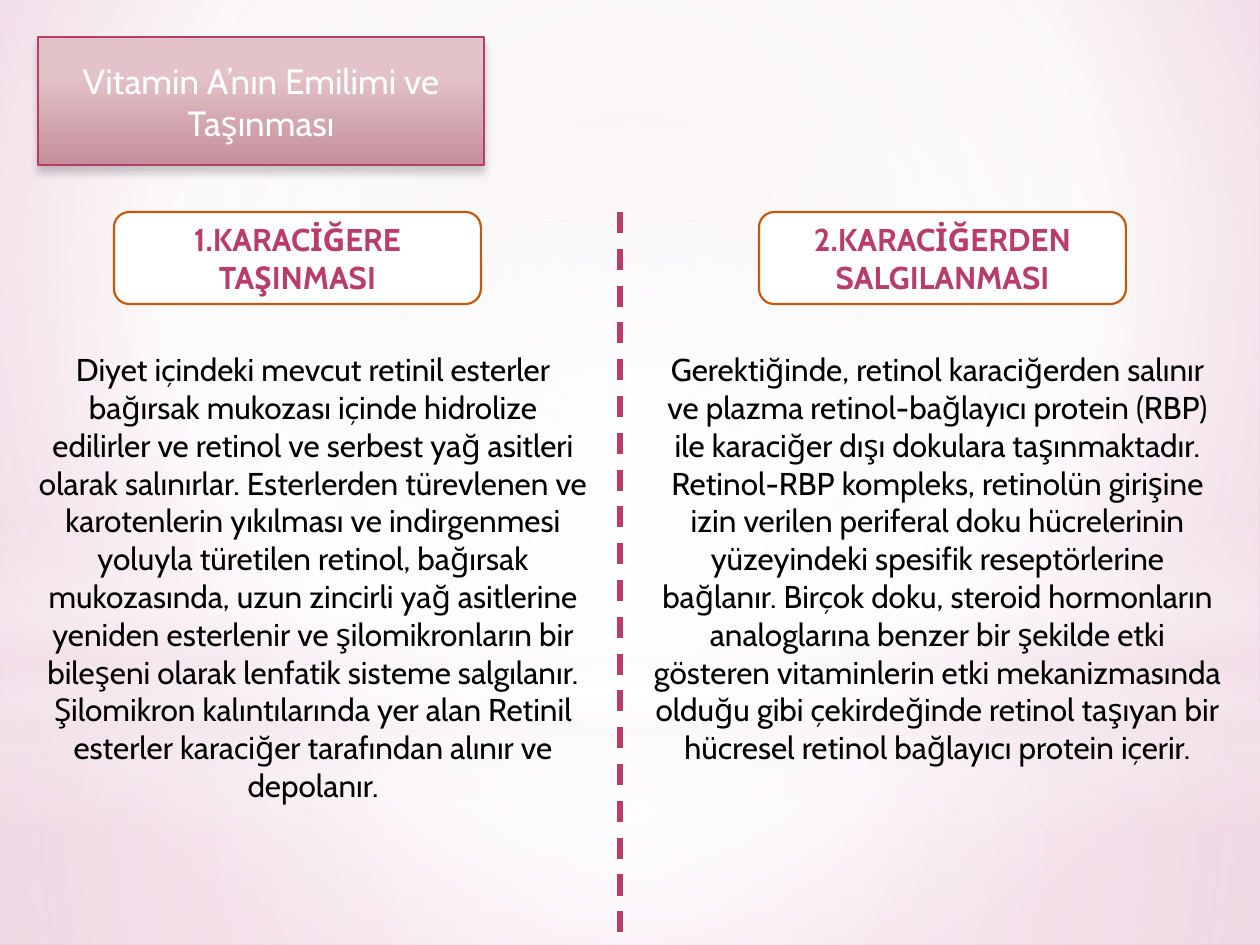
from dataclasses import dataclass

from pptx import Presentation
from pptx import util as u
from pptx.dml.color import RGBColor
from pptx.enum import dml, shapes, text
from pptx.oxml import parse_xml
from pptx.oxml.ns import nsdecls, qn


@dataclass(frozen=True)
class Theme:
    font: str = "Cabin"
    title_size: int = 20
    body_size: int = 18
    accent: str = "B83D68"
    border: str = "C2590C"
    white: str = "FFFFFF"
    black: str = "000000"
    blush: str = "F4E7ED"
    pink: str = "EDDAE2"
    rose: str = "E09DBC"
    tape_top: str = "E3C3C9"
    tape_bottom: str = "C58F9B"


def px(n):
    return u.Emu(round(n * 914400 / 126))


def rgb(color):
    return RGBColor.from_string(color)


def element(xml):
    tag, rest = xml.split(" ", 1)
    return parse_xml(f"{tag} {nsdecls('a')} {rest}")


def write(shape, content, *, font, size, color, bold=False,
          anchor=text.MSO_ANCHOR.MIDDLE, fit=text.MSO_AUTO_SIZE.NONE):
    tf = shape.text_frame
    tf.word_wrap = True
    tf.auto_size = fit
    tf.vertical_anchor = anchor
    p = tf.paragraphs[0]
    p.alignment = text.PP_ALIGN.CENTER
    r = p.add_run()
    r.text = content
    r.font.name = font
    r.font.size = u.Pt(size)
    r.font.bold = bold
    r.font.color.rgb = rgb(color)


def gradient(props, stops, focus=None):
    marks = "".join(
        f'<a:gs pos="{pos * 1000}"><a:srgbClr val="{color}">'
        f'<a:alpha val="{alpha * 1000}"/></a:srgbClr></a:gs>'
        for pos, color, alpha in stops)
    if focus:
        sides = " ".join(f'{side}="{value * 1000}"' for side, value in zip("ltrb", focus))
        shade = f'<a:path path="circle"><a:fillToRect {sides}/></a:path>'
    else:
        shade = '<a:lin ang="5400000" scaled="0"/>'
    fill = element(f'<a:gradFill rotWithShape="1"><a:gsLst>{marks}</a:gsLst>{shade}</a:gradFill>')
    props.replace(props.find(qn("a:solidFill")), fill)


class Deck:
    def __init__(self, theme):
        self.theme = theme
        self.prs = Presentation()
        self.prs.slide_width, self.prs.slide_height = px(1260), px(945)
        self.s = self.prs.slides.add_slide(self.prs.slide_layouts[5])

    def background(self, stops, focus):
        self.s.background.fill.solid()
        gradient(self.s.element.find(".//" + qn("p:bgPr")), stops, focus)

    def shape(self, kind, box, fill):
        sp = self.s.shapes.add_shape(kind, *map(px, box))
        sp.shadow.inherit = False
        sp.fill.solid()
        sp.fill.fore_color.rgb = rgb(fill)
        sp.line.fill.background()
        return sp

    def glow(self, kind, box, stops, focus=None):
        sp = self.shape(kind, box, self.theme.white)
        gradient(sp.element.spPr, stops, focus)

    def title(self, box, content):
        t = self.theme
        sp = self.s.shapes.title
        sp.left, sp.top, sp.width, sp.height = map(px, box)
        props = sp.element.spPr
        props.append(element('<a:prstGeom prst="flowChartPunchedTape"><a:avLst/></a:prstGeom>'))
        sp.fill.solid()
        gradient(props, [(28, t.tape_top, 100), (100, t.tape_bottom, 100)])
        sp.line.color.rgb = rgb(t.accent)
        sp.line.width = u.Pt(0.75)
        props.append(element(
            f'<a:effectLst ><a:outerShdw blurRad="{u.Pt(5)}" dist="{u.Pt(4)}" dir="5400000" '
            f'rotWithShape="0"><a:srgbClr val="{t.black}"><a:alpha val="20000"/></a:srgbClr>'
            '</a:outerShdw></a:effectLst>'))
        write(sp, content, font=t.font, size=t.title_size, color=t.white)
        self.s.shapes.element.append(sp.element)

    def heading(self, box, content):
        t = self.theme
        sp = self.shape(shapes.MSO_SHAPE.ROUNDED_RECTANGLE, box, t.white)
        sp.line.color.rgb = rgb(t.border)
        sp.line.width = u.Pt(1.25)
        write(sp, content, font=t.font, size=t.body_size, color=t.accent, bold=True)

    def divider(self, x, top, bottom):
        line = self.s.shapes.add_connector(
            shapes.MSO_CONNECTOR.STRAIGHT, px(x), px(top), px(x), px(bottom))
        line.line.color.rgb = rgb(self.theme.accent)
        line.line.width = u.Pt(3)
        line.line.dash_style = dml.MSO_LINE.DASH
        line.element.spPr.append(element("<a:effectLst />"))

    def body(self, box, content):
        t = self.theme
        sp = self.s.shapes.add_textbox(*map(px, box))
        write(sp, content, font=t.font, size=t.body_size, color=t.black,
              anchor=text.MSO_ANCHOR.TOP, fit=text.MSO_AUTO_SIZE.SHAPE_TO_FIT_TEXT)


def main():
    t = Theme()
    deck = Deck(t)
    rect, ellipse = shapes.MSO_SHAPE.RECTANGLE, shapes.MSO_SHAPE.OVAL
    centre = (50, 50, 50, 50)

    deck.background([(0, t.pink, 100), (60, t.white, 100), (100, t.rose, 100)], (20, 10, 20, 60))
    deck.glow(rect, (0, 703, 1260, 242),
              [(0, t.white, 91), (37, t.white, 76), (100, t.blush, 79)], centre)
    deck.glow(rect, (0, 0, 1260, 703),
              [(0, t.white, 89), (48, t.white, 62), (100, t.blush, 79)], centre)
    deck.glow(rect, (0, 519, 1260, 315),
              [(0, t.white, 0), (29, t.white, 30), (45, t.blush, 40),
               (55, t.white, 26), (65, t.blush, 60), (100, t.white, 0)])
    deck.glow(ellipse, (0, 220, 1260, 703), [(0, t.white, 100), (56, t.white, 0)], centre)

    deck.title((38, 37, 446, 128), "Vitamin A’nın Emilimi ve Taşınması")
    deck.divider(620, 212, 945)

    columns = [
        (114, "1.KARACİĞERE TAŞINMASI", (25, 344, 576, 509),
         "Diyet içindeki mevcut retinil esterler bağırsak mukozası içinde hidrolize edilirler "
         "ve retinol ve serbest yağ asitleri olarak salınırlar. Esterlerden türevlenen ve "
         "karotenlerin yıkılması ve indirgenmesi yoluyla türetilen retinol, bağırsak "
         "mukozasında, uzun zincirli yağ asitlerine yeniden esterlenir ve şilomikronların bir "
         "bileşeni olarak lenfatik sisteme salgılanır. Şilomikron kalıntılarında yer alan "
         "Retinil esterler karaciğer tarafından alınır ve depolanır."),
        (759, "2.KARACİĞERDEN SALGILANMASI", (640, 344, 595, 471),
         "Gerektiğinde, retinol karaciğerden salınır ve plazma retinol-bağlayıcı protein (RBP) "
         "ile karaciğer dışı dokulara taşınmaktadır. Retinol-RBP kompleks, retinolün girişine "
         "izin verilen periferal doku hücrelerinin yüzeyindeki spesifik reseptörlerine "
         "bağlanır. Birçok doku, steroid hormonların analoglarına benzer bir şekilde etki "
         "gösteren vitaminlerin etki mekanizmasında olduğu gibi çekirdeğinde retinol taşıyan "
         "bir hücresel retinol bağlayıcı protein içerir."),
    ]
    for left, heading, box, content in columns:
        deck.heading((left, 212, 367, 92), heading)
        deck.body(box, content)

    deck.prs.save("out.pptx")


if __name__ == "__main__":
    main()
